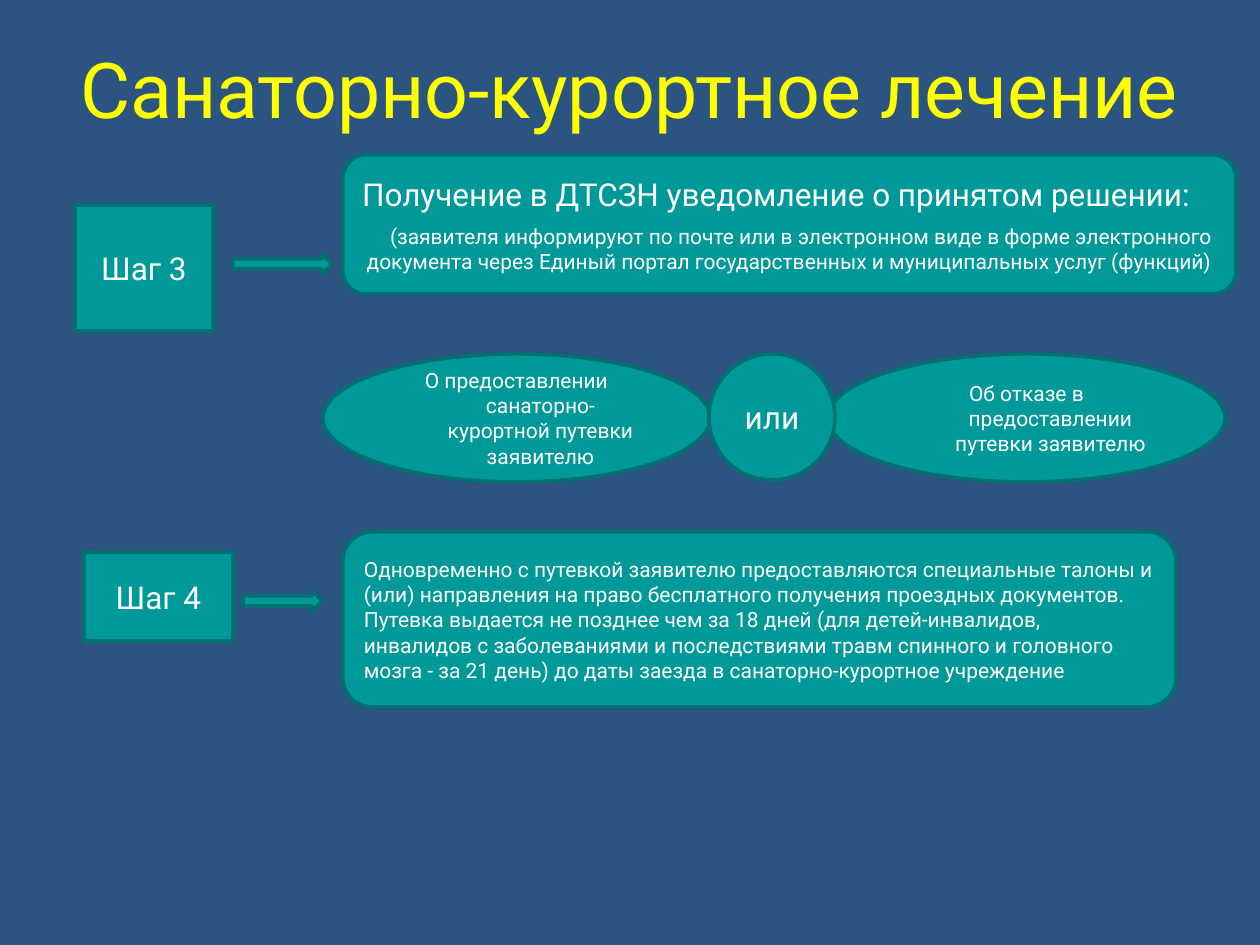
from pptx import Presentation
from pptx.dml.color import RGBColor
from pptx.enum.shapes import MSO_SHAPE
from pptx.enum.text import MSO_ANCHOR, PP_ALIGN
from pptx.util import Emu, Pt

SCALE = 914400 / 126
NAVY, TEAL, DARK_TEAL, YELLOW, WHITE = "2B5481", "009999", "007171", "FFFF00", "FFFFFF"

TITLE = "Санаторно-курортное лечение"
DECISION = "Получение в ДТСЗН уведомление о принятом решении:"
DELIVERY = (
    "(заявителя информируют по почте или в электронном виде в форме электронного "
    "документа через Единый портал государственных и муниципальных услуг (функций)"
)
VOUCHER = (
    "Одновременно с путевкой заявителю предоставляются специальные талоны и (или) "
    "направления на право бесплатного получения проездных документов. Путевка выдается "
    "не позднее чем за 18 дней (для детей-инвалидов, инвалидов с заболеваниями и "
    "последствиями травм спинного и головного мозга - за 21 день) до даты заезда в "
    "санаторно-курортное учреждение"
)
HANGING = {"size": 12, "margin": 48, "indent": -48}

# Each part: outline, (left, top, width, height), [(text, format), ...]
PARTS = [
    (MSO_SHAPE.RECTANGLE, (75, 205, 138, 126), [("Шаг 3", {})]),
    (MSO_SHAPE.ROUNDED_RECTANGLE, (343, 155, 893, 139), [
        (DECISION, {"align": PP_ALIGN.LEFT}),
        (DELIVERY, {"size": 12, "indent": 24, "before": 6}),
    ]),
    (MSO_SHAPE.RIGHT_ARROW, (233, 254, 99, 20), []),
    (MSO_SHAPE.RECTANGLE, (84, 552, 149, 89), [("Шаг 4", {})]),
    (MSO_SHAPE.OVAL, (323, 354, 387, 128),
     [("О предоставлении санаторно-курортной путевки заявителю", HANGING)]),
    (MSO_SHAPE.OVAL, (828, 354, 397, 128),
     [("Об отказе в предоставлении путевки заявителю", HANGING)]),
    (MSO_SHAPE.OVAL, (709, 354, 126, 126), [("или", {})]),
    (MSO_SHAPE.RIGHT_ARROW, (243, 591, 79, 20), []),
    (MSO_SHAPE.ROUNDED_RECTANGLE, (343, 532, 833, 175),
     [(VOUCHER, {"size": 12, "align": PP_ALIGN.LEFT})]),
]


def px(length):
    return Emu(round(length * SCALE))


def color(value):
    return RGBColor.from_string(value)


def write(paragraph, text, size=18, fill=WHITE, align=PP_ALIGN.CENTER,
          margin=0, indent=0, before=0):
    paragraph.alignment = align
    if margin or indent:
        properties = paragraph._p.get_or_add_pPr()
        properties.set("marL", str(px(margin)))
        properties.set("indent", str(px(indent)))
    if before:
        paragraph.space_before = Pt(before)
    run = paragraph.add_run()
    run.text = text
    run.font.name = "Roboto"
    run.font.size = Pt(size)
    run.font.color.rgb = color(fill)


def fill_frame(frame, lines):
    frame.word_wrap = True
    frame.vertical_anchor = MSO_ANCHOR.MIDDLE
    for number, (text, style) in enumerate(lines):
        paragraph = frame.add_paragraph() if number else frame.paragraphs[0]
        write(paragraph, text, **style)


def add_part(slide, outline, place, lines):
    part = slide.shapes.add_shape(outline, *map(px, place))
    part.shadow.inherit = False
    part.fill.solid()
    part.fill.fore_color.rgb = color(TEAL)
    part.line.color.rgb = color(DARK_TEAL)
    part.line.width = Pt(2)
    fill_frame(part.text_frame, lines)


def main():
    """Build the slide on steps 3 and 4 of sanatorium treatment."""
    deck = Presentation()
    deck.slide_width, deck.slide_height = px(1260), px(945)
    slide = deck.slides.add_slide(deck.slide_layouts[6])
    slide.background.fill.solid()
    slide.background.fill.fore_color.rgb = color(NAVY)
    title = slide.shapes.add_textbox(px(0), px(0), px(1260), px(175))
    fill_frame(title.text_frame, [(TITLE, {"size": 44, "fill": YELLOW})])
    for part in PARTS:
        add_part(slide, *part)
    deck.save("out.pptx")


if __name__ == "__main__":
    main()
